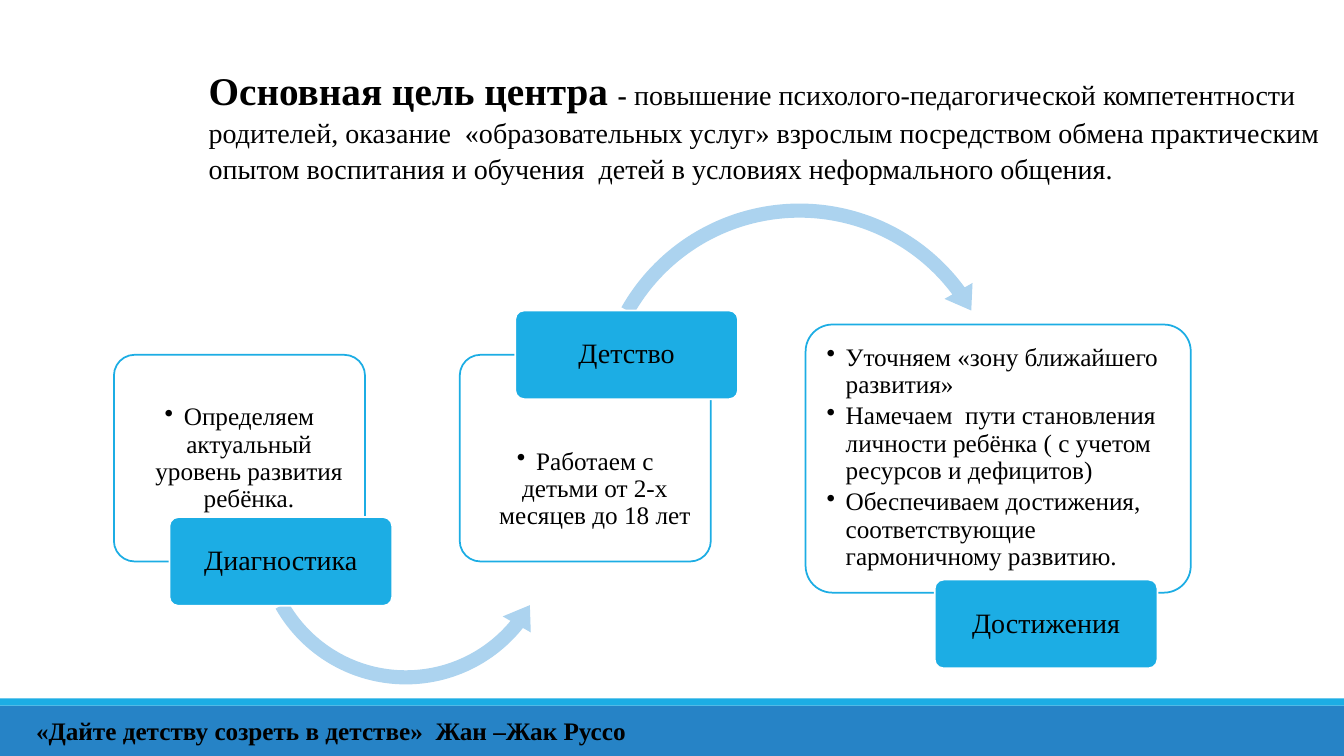
from pptx import Presentation
from pptx.dml.color import RGBColor
from pptx.enum.shapes import MSO_SHAPE
from pptx.enum.text import MSO_ANCHOR, MSO_AUTO_SIZE, PP_ALIGN
from pptx.util import Inches, Pt
from lxml import etree

FONT = "Times New Roman"
BLACK = RGBColor(0x00, 0x00, 0x00)
WHITE = RGBColor(0xFF, 0xFF, 0xFF)
SKY = RGBColor(0x1C, 0xAD, 0xE4)
BLUE = RGBColor(0x26, 0x83, 0xC6)
PALE = RGBColor(0xAC, 0xD3, 0xEF)

RECT, ROUND = MSO_SHAPE.RECTANGLE, MSO_SHAPE.ROUNDED_RECTANGLE
ARC_OVER, ARC_UNDER = MSO_SHAPE.CIRCULAR_ARROW, MSO_SHAPE.LEFT_CIRCULAR_ARROW
LEFT, CENTER, RIGHT = PP_ALIGN.LEFT, PP_ALIGN.CENTER, PP_ALIGN.RIGHT
TOP, MIDDLE = MSO_ANCHOR.TOP, MSO_ANCHOR.MIDDLE
NO_FIT = MSO_AUTO_SIZE.NONE

SLIDE_W, SLIDE_H = 13.33, 7.5
LABEL_W, LABEL_H = 2.21, 0.88
DEGREE = 0.6
A_NS = "{http://schemas.openxmlformats.org/drawingml/2006/main}"

STAGES = [
    {"box": (1.13, 3.52, 2.49, 2.05), "align": CENTER, "inset": 0.43,
     "label": "Диагностика", "offset": (0.55, 1.61),
     "items": ["Определяем актуальный уровень развития ребёнка."]},
    {"box": (4.56, 3.52, 2.49, 2.05), "align": CENTER, "inset": 0.87,
     "label": "Детство", "offset": (0.55, -0.44),
     "items": ["Работаем с детьми от 2-х месяцев до 18 лет"]},
    {"box": (7.99, 3.22, 3.82, 2.66), "align": LEFT, "inset": 0.12,
     "label": "Достижения", "offset": (1.28, 2.53),
     "items": ["Уточняем «зону ближайшего развития»",
               "Намечаем  пути становления личности ребёнка ( с учетом ресурсов и дефицитов)",
               "Обеспечиваем достижения,  соответствующие гармоничному развитию."]},
]


def set_attrs(obj, values):
    for name, value in values.items():
        setattr(obj, name, value)


def add_run(p, text, size, bold=False):
    r = p.add_run()
    r.text = text
    set_attrs(r.font, {"name": FONT, "size": Pt(size), "bold": bold})
    r.font.color.rgb = BLACK


def add_panel(s, kind, box, fill, line=None):
    sp = s.shapes.add_shape(kind, *map(Inches, box))
    sp.shadow.inherit = False
    sp.fill.solid()
    sp.fill.fore_color.rgb = fill
    if line is None:
        sp.line.fill.background()
    else:
        sp.line.color.rgb = line
        sp.line.width = Pt(1.25)
    if kind == ROUND:
        sp.adjustments[0] = 0.1
    return sp


def set_frame(tf, anchor, side, top, bottom):
    set_attrs(tf, {"word_wrap": True, "auto_size": NO_FIT, "vertical_anchor": anchor,
                   "margin_left": Inches(side), "margin_right": Inches(side),
                   "margin_top": Inches(top), "margin_bottom": Inches(bottom)})


def add_bullet(p):
    pPr = p._p.get_or_add_pPr()
    pPr.set("marL", str(Inches(0.19)))
    pPr.set("indent", str(-Inches(0.19)))
    etree.SubElement(pPr, A_NS + "buChar", char="•")


def add_goal(s, box):
    title = s.shapes.title
    set_attrs(title, dict(zip(("left", "top", "width", "height"), map(Inches, box))))
    set_frame(title.text_frame, TOP, 0.1, 0.05, 0.05)
    p = title.text_frame.paragraphs[0]
    set_attrs(p, {"alignment": LEFT, "line_spacing": 1.07, "space_after": Pt(8)})
    add_run(p, "Основная цель центра ", 28, True)
    add_run(p, "- ", 20, True)
    add_run(p, "повышение психолого-педагогической компетентности родителей, "
               "оказание  «образовательных услуг» взрослым посредством обмена "
               "практическим опытом воспитания и обучения  детей в условиях "
               "неформального общения.", 20)


def add_stage(s, box, align, inset, label, offset, items):
    card = add_panel(s, ROUND, box, WHITE, SKY)
    tf = card.text_frame
    set_frame(tf, TOP, 0.13, inset, 0)
    for i, item in enumerate(items):
        p = tf.add_paragraph() if i else tf.paragraphs[0]
        set_attrs(p, {"alignment": align, "level": 1, "line_spacing": 0.9,
                      "space_after": Pt(3)})
        add_bullet(p)
        add_run(p, item, 18)

    left, top = box[0] + offset[0], box[1] + offset[1]
    tag = add_panel(s, ROUND, (left, top, LABEL_W, LABEL_H), SKY, WHITE)
    set_frame(tag.text_frame, MIDDLE, 0.04, 0.03, 0.03)
    p = tag.text_frame.paragraphs[0]
    set_attrs(p, {"alignment": CENTER, "line_spacing": 0.9})
    add_run(p, label, 20)


def add_arc(s, kind, left, top, size, head, end, start):
    sp = add_panel(s, kind, (left, top, size, size), PALE)
    values = (0.14 / size, head * DEGREE, end * DEGREE, start * DEGREE, 0.16 / size)
    for i, value in enumerate(values):
        sp.adjustments[i] = value


def add_footer(s, box):
    left, top, width, height = box
    add_panel(s, RECT, box, BLUE)
    add_panel(s, RECT, (left, top - 0.07, width, 0.07), SKY)
    quote = s.shapes.add_textbox(*map(Inches, (left + 0.19, top + 0.03, 6.12, 0.4)))
    set_frame(quote.text_frame, TOP, 0.1, 0.05, 0.05)
    quote.text_frame.word_wrap = False
    p = quote.text_frame.paragraphs[0]
    set_attrs(p, {"alignment": RIGHT, "line_spacing": 1.07, "space_after": Pt(8)})
    add_run(p, "«Дайте детству созреть в детстве»  Жан –Жак Руссо", 18, True)


def main():
    prs = Presentation()
    set_attrs(prs, {"slide_width": Inches(SLIDE_W), "slide_height": Inches(SLIDE_H)})
    s = prs.slides.add_slide(prs.slide_layouts[5])
    add_goal(s, (1.97, 0.57, 11.23, 1.68))
    add_arc(s, ARC_UNDER, 2.45, 3.73, 3.15, 9.37, 38.96, 150.41)
    add_arc(s, ARC_OVER, 5.81, 1.93, 4.24, 6.78, 323.59, 209.56)
    for stage in STAGES:
        add_stage(s, **stage)
    add_footer(s, (0, 7, SLIDE_W, 0.5))
    prs.save("out.pptx")


if __name__ == "__main__":
    main()
